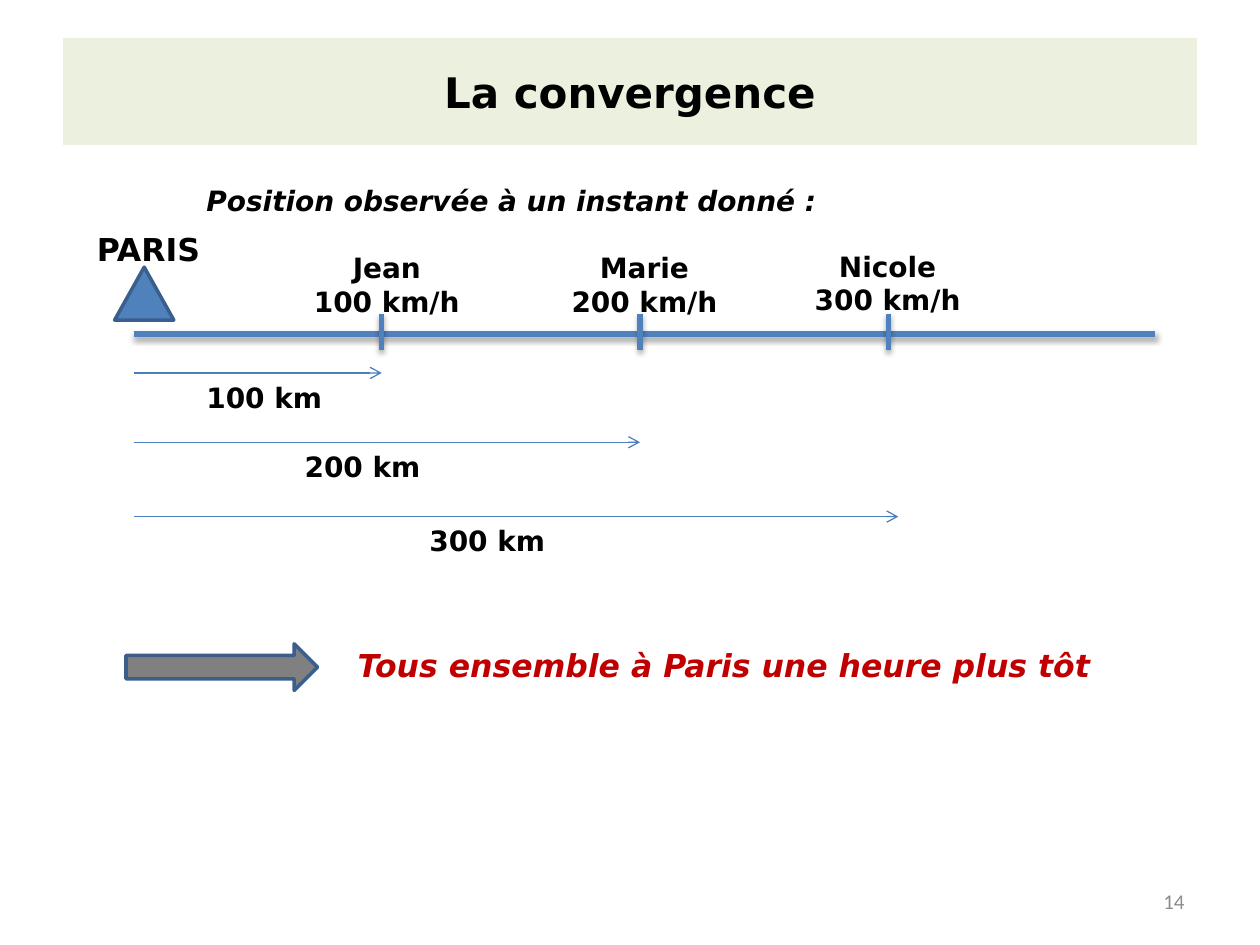
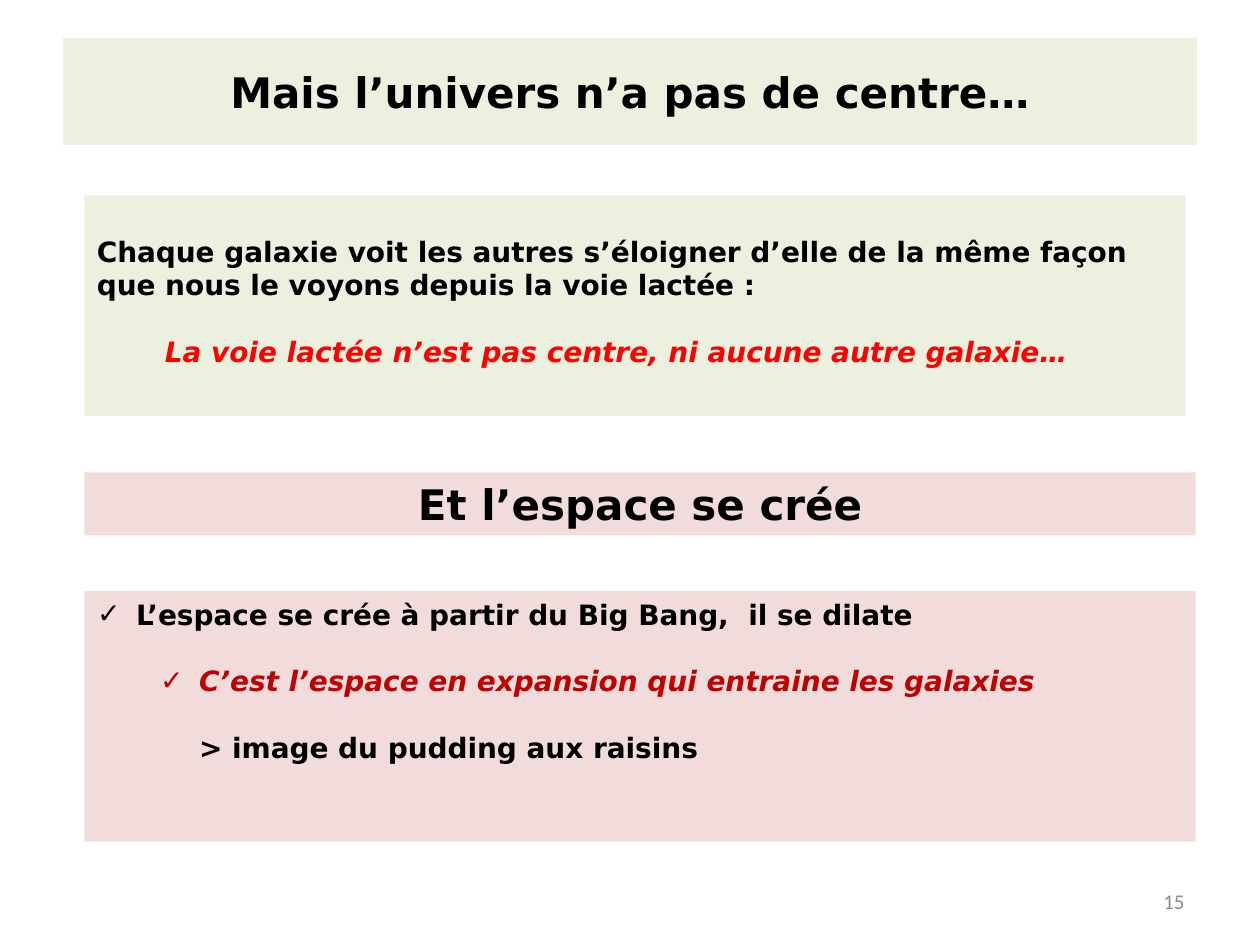
from collections import namedtuple

from lxml import etree
from pptx import Presentation
from pptx import util as u
from pptx.dml import color as col
from pptx.enum import shapes as sh, text as tx
from pptx.oxml import ns

COLS = 100
HUES = {
    "ink": "000000", "grey": "8C8C8C", "steel": "808080", "blue": "4F81BD",
    "thin": "4B7EBC", "edge": "3A5F8C", "green": "EBF1DE", "pink": "F2DCDB",
    "red": "FF0000", "dark": "C00000",
}
Box = namedtuple("Box", "x y w h")
TITLE = Box(5, 3, 90, 8.5)
NUMBER = Box(71.7, 69.5, 23.3, 4)
ROAD = Box(10.6, 26.5, 81.1, 20)
MORAL = Box(10, 50.8, 83.4, 4)
CLAIM = Box(6.7, 15.5, 87.4, 17.5)
BANNER = Box(6.7, 37.5, 88.2, 5)
LIST = Box(6.7, 46.9, 88.2, 19.9)

LEFT, MID, RIGHT = tx.PP_ALIGN.LEFT, tx.PP_ALIGN.CENTER, tx.PP_ALIGN.RIGHT
BASE = {"name": "DejaVu Sans", "size": u.Pt(16), "bold": True, "italic": False}
HEAD = {**BASE, "size": u.Pt(24)}
LARGE = {**BASE, "size": u.Pt(18)}
SLANT = {**BASE, "italic": True}
SMALL = {"name": "Calibri", "size": u.Pt(12), "bold": False}
GAP = u.Pt(18.8)

RUNNERS = [
    ("Jean", 100, 19.7, 20.1, -7.1, 19.7, 3.1, 4.8),
    ("Marie", 200, 40.2, 40.55, -7.1, 40.2, 8.6, 12.6),
    ("Nicole", 300, 59.9, 59.85, -7.2, 60.7, 14.5, 22.5),
]


def cell(deck, n):
    return int(deck.slide_width * n / COLS)


def put(item, **vals):
    for key, val in vals.items():
        setattr(item, key, val)


def rgb(name):
    return col.RGBColor.from_string(HUES[name])


def place(deck, item, box):
    put(item, **dict(zip(("left", "top", "width", "height"),
                         (cell(deck, n) for n in box))))


def paint(item, fill, edge=None):
    item.fill.solid()
    item.fill.fore_color.rgb = rgb(fill)
    if edge:
        item.line.color.rgb = rgb(edge)
        item.line.width = u.Pt(2)
    else:
        item.line.fill.background()


def add(para, words, font=BASE, hue="ink", align=LEFT, before=0):
    put(para, alignment=align, space_before=before)
    run = para.add_run()
    run.text = words
    put(run.font, **font)
    run.font.color.rgb = rgb(hue)
    return para


def frame(item, anchor=tx.MSO_ANCHOR.TOP):
    put(item.text_frame, word_wrap=True, vertical_anchor=anchor,
        auto_size=tx.MSO_AUTO_SIZE.NONE)
    return item.text_frame


def label(deck, page, box, lines, font=BASE, hue="ink", align=LEFT,
          anchor=tx.MSO_ANCHOR.TOP):
    item = page.shapes.add_textbox(*(cell(deck, n) for n in box))
    body = frame(item, anchor)
    for i, words in enumerate(lines):
        para = body.add_paragraph() if i else body.paragraphs[0]
        add(para, words, font, hue, align)
    return item


def form(deck, page, kind, box, fill, edge=None):
    item = page.shapes.add_shape(kind, *(cell(deck, n) for n in box))
    item.shadow.inherit = False
    paint(item, fill, edge)
    return item


def line(deck, page, ends, hue, width, shade=False, arrow=False):
    item = page.shapes.add_connector(
        sh.MSO_CONNECTOR.STRAIGHT, *(cell(deck, n) for n in ends))
    item.line.color.rgb = rgb(hue)
    item.line.width = u.Pt(width)
    if arrow:
        etree.SubElement(item.line._get_or_add_ln(), ns.qn("a:tailEnd"),
                         type="arrow")
    fx = etree.SubElement(item._element.spPr, ns.qn("a:effectLst"))
    if shade:
        cast = etree.SubElement(
            fx, ns.qn("a:outerShdw"), blurRad=str(u.Pt(3.1)),
            dist=str(u.Pt(1.8)), dir="5400000", rotWithShape="0")
        tone = etree.SubElement(cast, ns.qn("a:srgbClr"), val=HUES["ink"])
        etree.SubElement(tone, ns.qn("a:alpha"), val="35000")


def dent(para, left, mark=None):
    props = para._p.get_or_add_pPr()
    props.set("marL", str(u.Inches(left)))
    props.set("indent", str(u.Inches(-0.31 if mark else 0)))
    if mark:
        etree.SubElement(props, ns.qn("a:buFont"), typeface=BASE["name"])
        etree.SubElement(props, ns.qn("a:buChar"), char=mark)
    else:
        etree.SubElement(props, ns.qn("a:buNone"))


def start(deck, layout, title, number):
    page = deck.slides.add_slide(deck.slide_layouts[layout])
    head = page.shapes.title
    place(deck, head, TITLE)
    paint(head, "green")
    body = frame(head, tx.MSO_ANCHOR.MIDDLE)
    add(body.paragraphs[0], title, HEAD, align=MID)
    label(deck, page, NUMBER, [number], SMALL, "grey", RIGHT,
          tx.MSO_ANCHOR.MIDDLE)
    return page


def road(deck, page, box):
    x, y = box.x, box.y
    line(deck, page, (x, y, x + box.w, y), "blue", 3, shade=True)
    form(deck, page, sh.MSO_SHAPE.FLOWCHART_EXTRACT,
         (x - 1.5, y - 5.3, 4.7, 4.2), "blue", "edge")
    label(deck, page, (x - 3.9, y - 8.7, 11, 4), ["PARIS"], LARGE)
    label(deck, page, (x + 4.8, y - 12.4, 61.9, 3.7),
          ["Position observée à un instant donné :"], SLANT)
    for name, pace, tick, mid, top, reach, drop, text in RUNNERS:
        line(deck, page, (x + tick, y - 1.6, x + tick, y + 1.3),
             "blue", 3, shade=True)
        label(deck, page, (x + mid - 8, y + top, 16, 6.4),
              [name, f"{pace} km/h"], align=MID)
        line(deck, page, (x, y + drop, x + reach, y + drop),
             "thin", 0.75, arrow=True)
        label(deck, page, (x + text, y + drop + 0.1, 16, 3.7),
              [f"{pace} km"])


def moral(deck, page, box):
    form(deck, page, sh.MSO_SHAPE.RIGHT_ARROW,
         (box.x, box.y + 0.3, 15.2, 3.7), "steel", "edge")
    label(deck, page, (box.x + 17.4, box.y, box.w - 17.4, box.h),
          ["Tous ensemble à Paris une heure plus tôt"],
          {**LARGE, "italic": True}, "dark")


def claim(deck, page, box):
    item = form(deck, page, sh.MSO_SHAPE.RECTANGLE, box, "green")
    body = frame(item)
    body.margin_top = cell(deck, 3.1)
    add(body.paragraphs[0], "Chaque galaxie voit les autres s’éloigner d’elle "
        "de la même façon que nous le voyons depuis la voie lactée :")
    para = add(body.add_paragraph(), "La voie lactée n’est pas centre, "
               "ni aucune autre galaxie…", SLANT, "red", before=GAP)
    dent(para, 0.54)


def banner(deck, page, box):
    item = form(deck, page, sh.MSO_SHAPE.RECTANGLE, box, "pink")
    add(frame(item).paragraphs[0], "Et l’espace se crée", HEAD, align=MID)


def points(deck, page, box):
    item = page.placeholders[1]
    place(deck, item, box)
    paint(item, "pink")
    body = frame(item)
    rows = [
        ("L’espace se crée à partir du Big Bang,  il se dilate",
         BASE, "ink", 0.31, "✓"),
        ("C’est l’espace en expansion qui entraine les galaxies",
         SLANT, "dark", 0.81, "✓"),
        ("> image du pudding aux raisins", BASE, "ink", 0.81, None),
    ]
    for i, (words, font, hue, left, mark) in enumerate(rows):
        para = body.add_paragraph() if i else body.paragraphs[0]
        add(para, words, font, hue, before=GAP if i else 0)
        dent(para, left, mark)


def main():
    deck = Presentation()
    put(deck, slide_width=u.Inches(10), slide_height=u.Inches(7.5))
    page = start(deck, 5, "La convergence", "14")
    road(deck, page, ROAD)
    moral(deck, page, MORAL)
    page = start(deck, 1, "Mais l’univers n’a pas de centre…", "15")
    claim(deck, page, CLAIM)
    banner(deck, page, BANNER)
    points(deck, page, LIST)
    deck.save("out.pptx")


if __name__ == "__main__":
    main()
